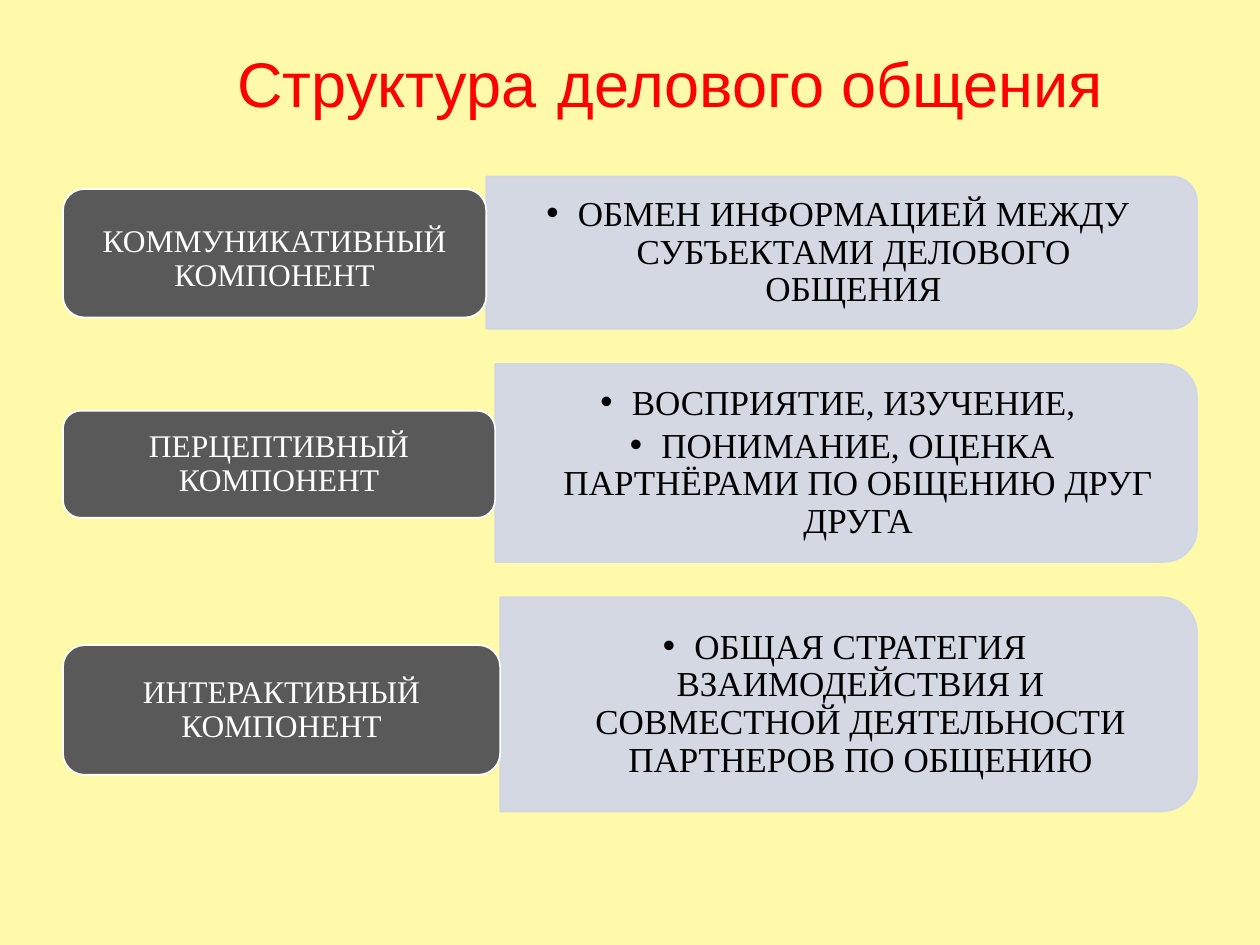
from lxml.etree import SubElement
from pptx import Presentation
from pptx.dml.color import RGBColor
from pptx.enum.shapes import MSO_SHAPE
from pptx.enum.text import MSO_ANCHOR, PP_ALIGN
from pptx.oxml.ns import qn
from pptx.util import Inches, Pt

BACKGROUND, PANEL, LABEL = "FFFAA9", "CFD5EA", "595959"
RED, BLACK, WHITE = "FF0000", "000000", "FFFFFF"
SERIF, SANS = "Times New Roman", "Arial"
LEFT, RIGHT, TOP, GAP = 0.5, 9.5, 1.4, 0.28

# label, label width, label top, label height, extra top inset, panel height, panel items
COMPONENTS = [
    ("КОММУНИКАТИВНЫЙ КОМПОНЕНТ", 3.36, 1.5, 1.02, 0.1, 1.21,
     ["ОБМЕН ИНФОРМАЦИЕЙ МЕЖДУ СУБЪЕКТАМИ ДЕЛОВОГО ОБЩЕНИЯ"]),
    ("ПЕРЦЕПТИВНЫЙ КОМПОНЕНТ", 3.43, 3.26, 0.85, 0, 1.57,
     ["ВОСПРИЯТИЕ, ИЗУЧЕНИЕ, ",
      "ПОНИМАНИЕ, ОЦЕНКА ПАРТНЁРАМИ ПО ОБЩЕНИЮ ДРУГ ДРУГА"]),
    ("ИНТЕРАКТИВНЫЙ КОМПОНЕНТ", 3.47, 5.12, 1.03, 0, 1.7,
     ["ОБЩАЯ СТРАТЕГИЯ ВЗАИМОДЕЙСТВИЯ И СОВМЕСТНОЙ ДЕЯТЕЛЬНОСТИ "
      "ПАРТНЕРОВ ПО ОБЩЕНИЮ"]),
]


def paint(color_format, color):
    """Fill a fill or line with one solid colour."""
    color_format.solid()
    color_format.fore_color.rgb = RGBColor.from_string(color)


def add_run(paragraph, text, size, font, color):
    run = paragraph.add_run()
    run.text = text
    run.font.size = Pt(size)
    run.font.name = font
    run.font.color.rgb = RGBColor.from_string(color)


def set_frame(frame, side, top, bottom):
    frame.word_wrap = True
    frame.vertical_anchor = MSO_ANCHOR.MIDDLE
    frame.margin_left = frame.margin_right = Inches(side)
    frame.margin_top, frame.margin_bottom = Inches(top), Inches(bottom)


def add_block(slide, kind, left, top, width, height, fill, line):
    shape = slide.shapes.add_shape(
        kind, Inches(left), Inches(top), Inches(width), Inches(height))
    shape.shadow.inherit = False
    paint(shape.fill, fill)
    paint(shape.line.fill, line)
    shape.line.width = Pt(1)
    return shape


def add_bullet(paragraph):
    paragraph.level = 1
    properties = paragraph._p.get_or_add_pPr()
    properties.set("marL", str(Inches(0.25)))
    properties.set("indent", str(-Inches(0.25)))
    SubElement(properties, qn("a:buFont")).set("typeface", SANS)
    SubElement(properties, qn("a:buChar")).set("char", "•")


def add_title(slide):
    box = slide.shapes.add_textbox(
        Inches(0.83), Inches(0.3), Inches(8.98), Inches(0.61))
    set_frame(box.text_frame, 0.1, 0.05, 0.05)
    paragraph = box.text_frame.paragraphs[0]
    paragraph.alignment = PP_ALIGN.CENTER
    add_run(paragraph, "Структура", 36, SANS, RED)
    add_run(paragraph, " ", 44, SANS, BLACK)
    add_run(paragraph, "делового общения", 36, SANS, RED)


def add_panel(slide, left, top, height, items):
    # The shape is turned a quarter so that its rounded corners face right
    width = RIGHT - left
    shape = add_block(
        slide, MSO_SHAPE.ROUND_2_SAME_RECTANGLE,
        left + (width - height) / 2, top + (height - width) / 2,
        height, width, PANEL, PANEL)
    shape.rotation = 90
    for color in shape._element.spPr.iter(qn("a:srgbClr")):
        SubElement(color, qn("a:alpha")).set("val", "90000")

    # Upright text over the turned shape
    box = slide.shapes.add_textbox(
        Inches(left), Inches(top + 0.06), Inches(width - 0.06), Inches(height - 0.12))
    frame = box.text_frame
    set_frame(frame, 0.27, 0.14, 0.14)
    for index, item in enumerate(items):
        paragraph = frame.add_paragraph() if index else frame.paragraphs[0]
        add_bullet(paragraph)
        paragraph.alignment = PP_ALIGN.CENTER
        paragraph.line_spacing = 0.9
        paragraph.space_after = Pt(3)
        add_run(paragraph, item, 20, SERIF, BLACK)


def add_label(slide, text, top, width, height, extra_inset):
    shape = add_block(slide, MSO_SHAPE.ROUNDED_RECTANGLE,
                      LEFT, top, width, height, LABEL, WHITE)
    set_frame(shape.text_frame, 0.07, 0.04 + extra_inset, 0.04)
    paragraph = shape.text_frame.paragraphs[0]
    paragraph.alignment = PP_ALIGN.CENTER
    paragraph.line_spacing = 0.9
    add_run(paragraph, text, 18, SERIF, WHITE)


def main():
    presentation = Presentation()
    presentation.slide_width, presentation.slide_height = Inches(10), Inches(7.5)
    slide = presentation.slides.add_slide(presentation.slide_layouts[6])
    paint(slide.background.fill, BACKGROUND)
    add_title(slide)

    # Rows of label and description
    panel_top = TOP
    for text, width, top, height, extra_inset, panel_height, items in COMPONENTS:
        add_panel(slide, LEFT + width, panel_top, panel_height, items)
        add_label(slide, text, top, width, height, extra_inset)
        panel_top += panel_height + GAP

    presentation.save("out.pptx")


if __name__ == "__main__":
    main()
